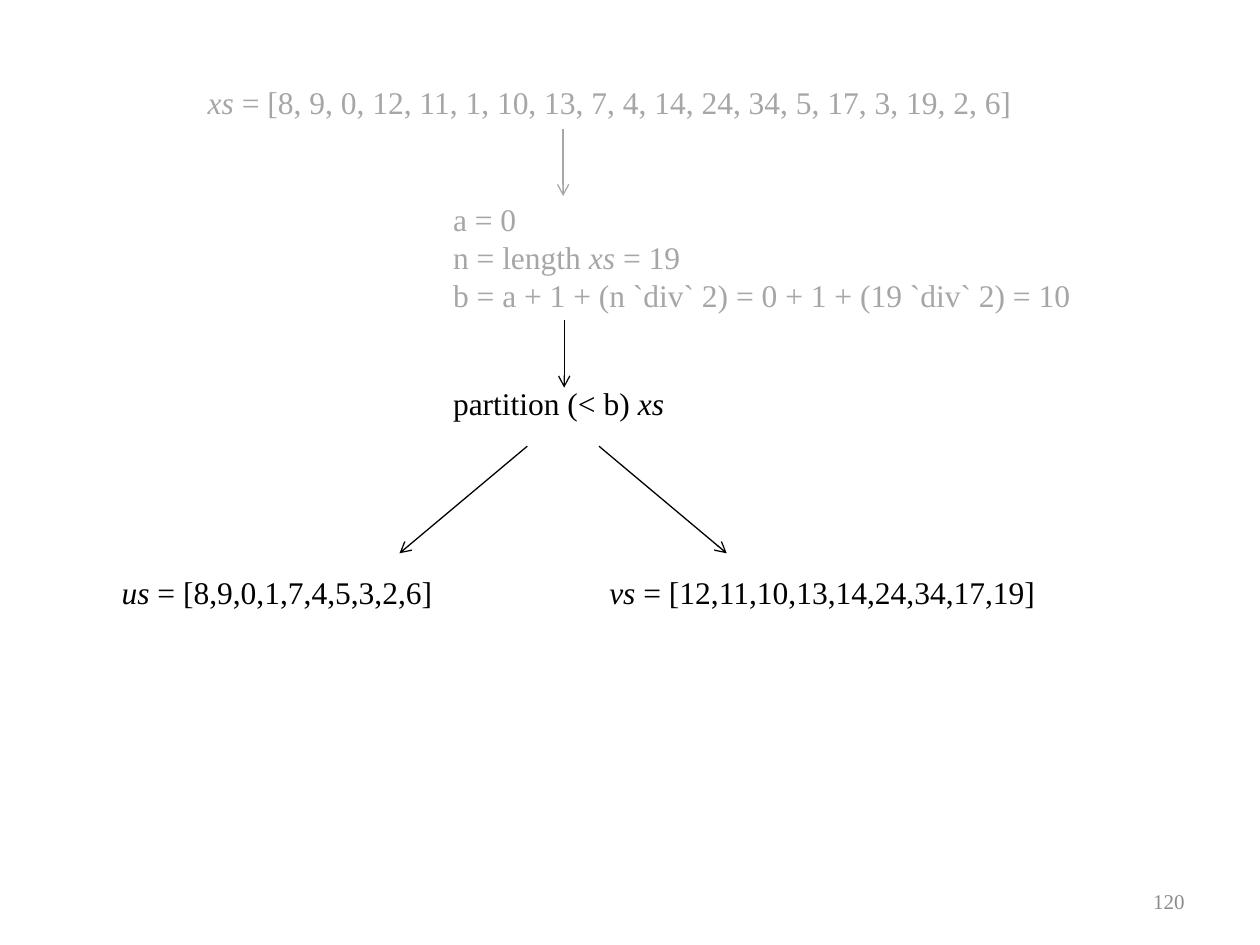
from lxml import etree
from pptx import Presentation
from pptx.dml.color import RGBColor
from pptx.enum import shapes, text
from pptx.oxml import ns
from pptx.util import Pt

INK = {"now": "000000", "past": "A6A6A6", "page": "8C8C8C"}
FONT = "Times New Roman"


def rgb(ink):
    return RGBColor.from_string(INK[ink])


def write(slide, box, lines, ink, size=18):
    """Add a text box; words between asterisks are italic."""
    frame = slide.shapes.add_textbox(*map(Pt, box)).text_frame
    frame.word_wrap = False
    frame.auto_size = text.MSO_AUTO_SIZE.SHAPE_TO_FIT_TEXT
    for i, line in enumerate(lines):
        para = frame.add_paragraph() if i else frame.paragraphs[0]
        para.font.name, para.font.size = FONT, Pt(size)
        para.font.color.rgb = rgb(ink)
        for j, part in enumerate(line.split("*")):
            if part:
                run = para.add_run()
                run.text = part
                if j % 2:
                    run.font.italic = True
    return frame


def arrow(slide, start, end, ink):
    line = slide.shapes.add_connector(
        shapes.MSO_CONNECTOR.STRAIGHT, *map(Pt, (*start, *end)))
    line.line.width = Pt(0.75)
    line.line.color.rgb = rgb(ink)
    etree.SubElement(line.line._get_or_add_ln(), ns.qn("a:tailEnd"), type="arrow")
    etree.SubElement(line._element.spPr, ns.qn("a:effectLst"))


def source(slide, box):
    """The list to search, with the arrow leaving it."""
    left, top, wide, high = box
    write(slide, box, ["*xs* = [8, 9, 0, 12, 11, 1, 10, 13, 7, 4, 14, 24, 34, "
                       "5, 17, 3, 19, 2, 6]"], "past")
    x, y = left + 210.2, top + high + 0.6
    arrow(slide, (x, y), (x, y + 38.4), "past")


def bounds(slide, box):
    """The values that fix the pivot, with the arrow leaving them."""
    left, top, wide, high = box
    write(slide, box, ["a = 0", "n = length *xs* = 19",
                       "b = a + 1 + (n `div` 2) = 0 + 1 + (19 `div` 2) = 10"],
          "past")
    x, y = left + 70.6, top + high - 0.6
    arrow(slide, (x, y), (x, y + 38.4), "now")


def split(slide, box):
    """The partition call and the two lists it yields."""
    left, top, wide, high = box
    write(slide, box, ["partition (< b) *xs*"], "now")
    mid, y = left + 70, top + high + 10
    for side in (-1, 1):
        arrow(slide, (mid + side * 20.5, y), (mid + side * 93.5, y + 61.2), "now")
    halves = [(-189.4, 193.7, "*us* = [8,9,0,1,7,4,5,3,2,6]"),
              (89.3, 261.4, "*vs* = [12,11,10,13,14,24,34,17,19]")]
    for shift, width, line in halves:
        write(slide, (left + shift, top + 108, width, high), [line], "now")


def number(slide, box):
    frame = write(slide, box, ["120"], "page", 12)
    frame.auto_size = text.MSO_AUTO_SIZE.NONE
    frame.word_wrap = True
    frame.vertical_anchor = text.MSO_ANCHOR.MIDDLE
    frame.paragraphs[0].alignment = text.PP_ALIGN.RIGHT


def main():
    deck = Presentation()
    deck.slide_width, deck.slide_height = Pt(720), Pt(540)
    slide = deck.slides.add_slide(deck.slide_layouts[6])
    source(slide, (111.6, 44, 478.8, 29))
    bounds(slide, (251.8, 111, 370.8, 72.7))
    split(slide, (251.8, 216, 137.5, 29))
    number(slide, (516, 500.5, 168, 28.8))
    deck.save("out.pptx")


if __name__ == "__main__":
    main()
